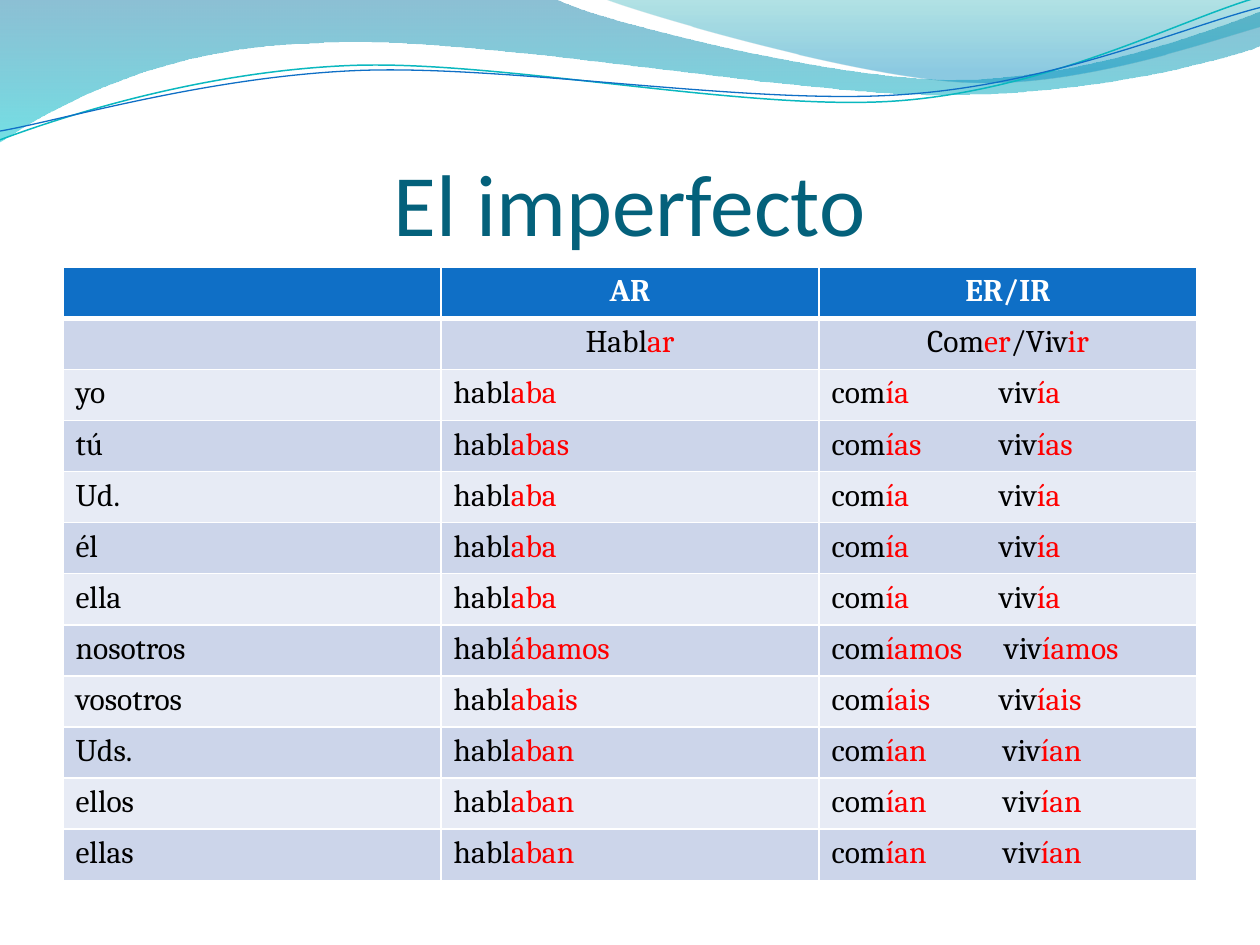
import math

import pptx
import pptx.util
import pptx.dml.color
import pptx.enum.text
import pptx.oxml
import pptx.oxml.ns
from pptx.util import Inches

RGB = pptx.dml.color.RGBColor
ALIGN = pptx.enum.text.PP_ALIGN
qn = pptx.oxml.ns.qn
NS = pptx.oxml.ns.nsdecls("a")

WHITE = RGB(0xFF, 0xFF, 0xFF)
BLACK = RGB(0, 0, 0)
RED = RGB(0xFF, 0, 0)
BLUE = RGB(0x0F, 0x6F, 0xC6)
TEAL = RGB(0x0A, 0xB8, 0xBF)
TITLE = RGB(0x04, 0x61, 0x7B)
BANDS = RGB(0xCC, 0xD5, 0xEA), RGB(0xE7, 0xEB, 0xF5)

# Each wave is a list of segments: one point is a line, three are a Bezier curve.
LEFT_WAVE = [
    [(0, 0)], [(4.4, -0.01)],
    [(4.76, 0.17), (6.64, 0.63), (7.58, 0.63)],
    [(8.53, 0.63), (9.58, 0.26), (10, 0.09)], [(10.01, 0.36)],
    [(9.83, 0.44), (8.7, 0.76), (7.46, 0.75)],
    [(6.22, 0.75), (3.82, 0.28), (2.57, 0.34)],
    [(1.29, 0.36), (0.46, 0.83), (-0.01, 1.13)], [(0, 0)],
]
RIGHT_WAVE = [
    [(4.79, -0.01)],
    [(5.09, 0.11), (6.82, 0.62), (7.69, 0.65)],
    [(8.56, 0.69), (9.61, 0.32), (10, 0.21)], [(10, 0)], [(4.79, -0.01)],
]
TEAL_LINE = [
    [(0, 1.11)],
    [(0.48, 0.93), (1.58, 0.57), (2.77, 0.52)],
    [(3.95, 0.47), (5.93, 0.89), (7.13, 0.8)],
    [(8.33, 0.71), (9.38, 0.15), (9.98, -0.02)],
]
BLUE_LINE = [
    [(0, 1.04)],
    [(0.47, 0.96), (1.64, 0.61), (2.83, 0.56)],
    [(4.03, 0.51), (5.97, 0.84), (7.17, 0.75)],
    [(8.36, 0.67), (9.41, 0.21), (10, 0.06)],
]
LINE_TILT = -2.7
LINE_CENTER = 4.99, 0.58

# Pronoun, -ar ending, -er/-ir ending
ENDINGS = [
    ("yo", "aba", "ía"), ("tú", "abas", "ías"), ("Ud.", "aba", "ía"),
    ("él", "aba", "ía"), ("ella", "aba", "ía"),
    ("nosotros", "ábamos", "íamos"), ("vosotros", "abais", "íais"),
    ("Uds.", "aban", "ían"), ("ellos", "aban", "ían"), ("ellas", "aban", "ían"),
]
# In a cell, "|" switches between stem and ending.
ROWS = [("", "AR", "ER/IR"), ("", "Habl|ar", "Com|er|/Viv|ir")] + [
    (who, f"habl|{ar}", f"com|{er}|\tviv|{er}") for who, ar, er in ENDINGS]
TAB = 1.33
WIDE_TABS = {"ían": 1.36, "íamos": 1.37}


def rotate(point, center, degrees):
    angle = math.radians(degrees)
    dx, dy = point[0] - center[0], point[1] - center[1]
    return (center[0] + dx * math.cos(angle) - dy * math.sin(angle),
            center[1] + dx * math.sin(angle) + dy * math.cos(angle))


def add_wave(shapes, left, top, segments, close=False, tilt=0):
    """Build the outline on all its points, then join them into curves."""
    points = [rotate(pt, LINE_CENTER, -tilt) for segment in segments for pt in segment]
    points = [(left + Inches(x), top + Inches(y)) for x, y in points]
    builder = shapes.build_freeform(*points[0])
    builder.add_line_segments(points[1:], close=close)
    sp = builder.convert_to_shape()
    lines = iter(list(sp.element.spPr.iter(qn("a:lnTo"))))
    for segment in segments[1:]:
        first, *rest = [next(lines) for _ in segment]
        if rest:
            curve = pptx.oxml.parse_xml(f"<a:cubicBezTo {NS}/>")
            first.addprevious(curve)
            for line in (first, *rest):
                curve.append(line[0])
                line.getparent().remove(line)
    sp.rotation = tilt
    sp.shadow.inherit = False
    return sp


def add_filled_wave(shapes, left, top, segments, stops):
    """Stops are (position, colour, opacity in percent), from top to bottom."""
    sp = add_wave(shapes, left, top, segments, close=True)
    sp.line.fill.background()
    sp.fill.gradient()
    sp.fill.gradient_angle = 270
    for stop, (position, color, _) in zip(sp.fill.gradient_stops, stops):
        stop.position = position
        stop.color.rgb = color
    for clr, (_, _, opacity) in zip(sp.element.spPr.iter(qn("a:srgbClr")), stops):
        clr.append(pptx.oxml.parse_xml(f'<a:alpha {NS} val="{opacity * 1000}"/>'))


def add_line_wave(shapes, left, top, segments, color, width):
    sp = add_wave(shapes, left, top, segments, tilt=LINE_TILT)
    sp.fill.background()
    sp.line.color.rgb = color
    sp.line.width = pptx.util.Pt(width)


def add_header_waves(s, left, top):
    add_filled_wave(s.shapes, left, top, LEFT_WAVE, [
        (0, RGB(0x00, 0x74, 0xA1), 45), (1, RGB(0x00, 0xC6, 0xCF), 55)])
    add_filled_wave(s.shapes, left, top, RIGHT_WAVE, [
        (0, RGB(0x00, 0xA1, 0xA9), 30), (0.8, RGB(0x00, 0x8B, 0xBF), 45)])
    lines = s.shapes.add_group_shape().shapes
    add_line_wave(lines, left, top, TEAL_LINE, TEAL, 0.85)
    add_line_wave(lines, left, top, BLUE_LINE, BLUE, 0.75)


def set_title(s, text, left, top, width, height):
    title = s.shapes.title
    title.left, title.top, title.width, title.height = left, top, width, height
    title.element.getparent().append(title.element)  # in front of the waves
    tf = title.text_frame
    tf.text = text
    tf.auto_size = pptx.enum.text.MSO_AUTO_SIZE.NONE
    tf.vertical_anchor = pptx.enum.text.MSO_ANCHOR.BOTTOM
    tf.margin_left = tf.margin_right = tf.margin_bottom = 0
    tf.margin_top = Inches(0.05)
    p = tf.paragraphs[0]
    p.alignment = ALIGN.CENTER
    p.font.name, p.font.size = "Calibri", pptx.util.Pt(50)
    p.font.color.rgb = TITLE


def set_borders(cell, **widths):
    """Solid white borders; widths in points by side: L, R, T, B."""
    for side, width in widths.items():
        cell._tc.get_or_add_tcPr().append(pptx.oxml.parse_xml(
            f'<a:ln{side} {NS} w="{pptx.util.Pt(width)}"><a:solidFill>'
            f'<a:srgbClr val="{WHITE}"/></a:solidFill></a:ln{side}>'))


def fill_cell(cell, text, row):
    set_borders(cell, L=1, R=1, T=3 if row == 1 else 1, B=3 if row == 0 else 1)
    cell.fill.solid()
    cell.fill.fore_color.rgb = BLUE if row == 0 else BANDS[(row - 1) % 2]
    p = cell.text_frame.paragraphs[0]
    p.alignment = ALIGN.CENTER if row < 2 else ALIGN.LEFT
    p.font.name, p.font.size, p.font.bold = "Cambria", pptx.util.Pt(18), row == 0
    if not text:
        return
    parts = text.split("|")
    if "\t" in text:
        tab = Inches(WIDE_TABS.get(parts[-1], TAB))
        p._p.get_or_add_pPr().insert(0, pptx.oxml.parse_xml(
            f'<a:tabLst {NS}><a:tab pos="{tab}" algn="l"/></a:tabLst>'))
    stem_color = WHITE if row == 0 else BLACK
    for i, part in enumerate(parts):
        r = p.add_run()
        r.text = part
        r.font.color.rgb = RED if i % 2 else stem_color


def add_conjugation_table(s, left, top, width, height):
    table = s.shapes.add_table(len(ROWS), len(ROWS[0]), left, top, width, height).table
    for i, row in enumerate(ROWS):
        for j, text in enumerate(row):
            fill_cell(table.cell(i, j), text, i)


def main():
    prs = pptx.Presentation()
    prs.slide_width, prs.slide_height = Inches(10), Inches(7.5)
    s = prs.slides.add_slide(prs.slide_layouts[5])
    add_header_waves(s, 0, 0)
    set_title(s, "El imperfecto", Inches(0.5), Inches(0.77), Inches(9), Inches(1.25))
    add_conjugation_table(s, Inches(0.5), Inches(2.12), Inches(9), Inches(4.87))
    prs.save("out.pptx")


if __name__ == "__main__":
    main()
